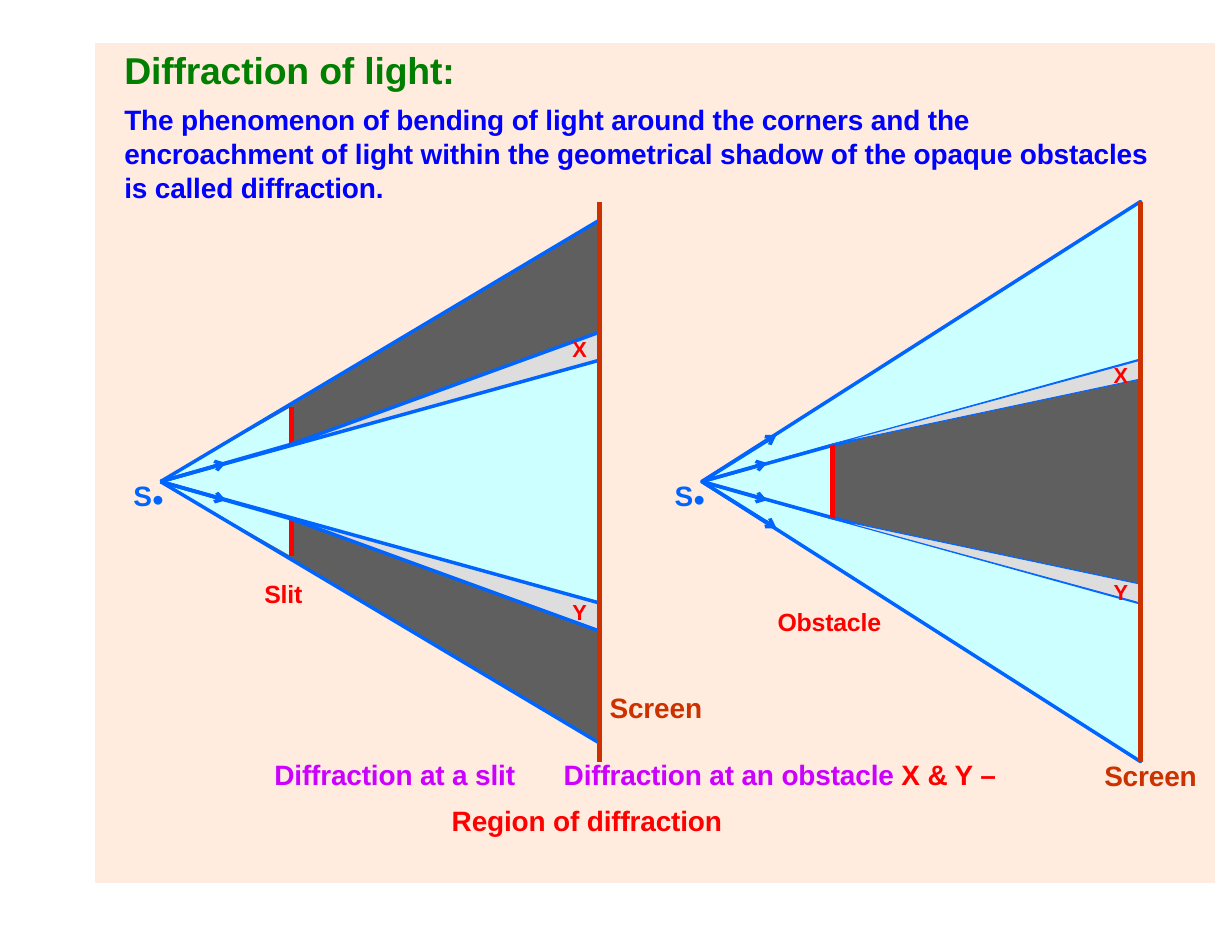
from dataclasses import dataclass
from typing import NamedTuple, Optional

from lxml import etree
from pptx import Presentation
from pptx import util as u
from pptx.dml.color import RGBColor
from pptx.enum import shapes, text
from pptx.oxml.ns import qn

UNIT = u.Inches(1) // 12


@dataclass(frozen=True)
class Theme:
    font: str = "Arial"
    card: str = "FFECDF"
    shadow: str = "5F5F5F"
    lit: str = "CCFFFF"
    fringe: str = "DDDDDD"
    ray: str = "0065FF"
    barrier: str = "FF0000"
    screen: str = "CC3200"
    title: str = "007F00"
    body: str = "0000FF"
    caption: str = "CC00FF"
    title_size: int = 24
    text_size: int = 18
    label_size: int = 16
    mark_size: int = 14
    dot_size: int = 36
    ray_width: float = 2.25
    wall_width: float = 3


class Point(NamedTuple):
    col: float
    row: float


class Run(NamedTuple):
    words: str
    color: str
    size: int
    bold: bool = True
    baseline: int = 0
    spacing: int = -10


class Label(NamedTuple):
    at: Point
    cols: float
    rows: float
    runs: list
    hang: Optional[dict] = None
    tab: float = 0
    line_spacing: float = 1.0


THEME = Theme()
SCREEN = 47
BARRIER = 14
SLIT_SOURCE = Point(17.2, 51.6)
OBSTACLE_SOURCE = Point(75.2, 51.6)


def emu(units: float) -> int:
    return round(units * UNIT)


def shift(origin: Point, col: float, row: float) -> Point:
    return Point(origin.col + col, origin.row + row)


def draw_outline(slide, origin: Point, corners: list, fill: str = "",
                 line: str = "", width: float = 0, close: bool = True) -> None:
    places = [shift(origin, *corner) for corner in corners]
    spots = [(emu(place.col), emu(place.row)) for place in places]
    builder = slide.shapes.build_freeform(*spots[0], scale=1.0)
    builder.add_line_segments(spots[1:], close=close)
    region = builder.convert_to_shape()
    region.shadow.inherit = False
    for part, color in ((region.fill, fill), (region.line.fill, line)):
        if color:
            part.solid()
            part.fore_color.rgb = RGBColor.from_string(color)
        else:
            part.background()
    if line:
        region.line.width = u.Pt(width)


def draw_line(slide, origin: Point, start: tuple, end: tuple, color: str,
              width: float, arrow: bool = False) -> None:
    begin, finish = shift(origin, *start), shift(origin, *end)
    ray = slide.shapes.add_connector(
        shapes.MSO_CONNECTOR.STRAIGHT, emu(begin.col), emu(begin.row),
        emu(finish.col), emu(finish.row))
    ray.line.color.rgb = RGBColor.from_string(color)
    ray.line.width = u.Pt(width)
    if arrow:
        etree.SubElement(ray.line._get_or_add_ln(), qn("a:tailEnd"),
                         type="arrow", w="med", len="med")
    etree.SubElement(ray._element.spPr, qn("a:effectLst"))


def draw_label(slide, label: Label) -> None:
    box = slide.shapes.add_textbox(
        emu(label.at.col), emu(label.at.row), emu(label.cols), emu(label.rows))
    frame_format = {"word_wrap": True, "margin_left": 0, "margin_right": 0,
                    "margin_top": u.Inches(0.01), "margin_bottom": 0,
                    "auto_size": text.MSO_AUTO_SIZE.SHAPE_TO_FIT_TEXT}
    for name, value in frame_format.items():
        setattr(box.text_frame, name, value)
    paragraph = box.text_frame.paragraphs[0]
    paragraph.space_before = u.Pt(1)
    paragraph.line_spacing = label.line_spacing
    properties = paragraph._p.get_or_add_pPr()
    for name, units in (label.hang or {"marL": 0.12}).items():
        properties.set(name, str(emu(units)))
    if label.tab:
        stops = etree.SubElement(properties, qn("a:tabLst"))
        etree.SubElement(stops, qn("a:tab"), pos=str(emu(label.tab)), algn="l")
    for part in label.runs:
        run = paragraph.add_run()
        run.text = part.words
        run_format = {"name": THEME.font, "size": u.Pt(part.size), "bold": part.bold}
        for name, value in run_format.items():
            setattr(run.font, name, value)
        run.font.color.rgb = RGBColor.from_string(part.color)
        run._r.get_or_add_rPr().set("spc", str(part.spacing))
        if part.baseline:
            run._r.get_or_add_rPr().set("baseline", str(part.baseline))


def draw_source(slide, source: Point) -> None:
    draw_label(slide, Label(shift(source, -3.4, -3.5), 4.4, 5.2, [
        Run("S", THEME.ray, THEME.text_size, spacing=20),
        Run("•", THEME.ray, THEME.dot_size, False, -10000, 30)], {"marL": 0.48}))


def draw_arrows(slide, source: Point, tips: list) -> None:
    for col, row in tips:
        for side in (-1, 1):
            draw_line(slide, source, (0, 0), (col, side * row), THEME.ray,
                      THEME.ray_width, arrow=True)


def draw_slit(slide, source: Point) -> None:
    t = THEME
    for side in (-1, 1):
        draw_outline(slide, source, [(0, 0), (SCREEN, 13 * side), (SCREEN, 28 * side)], t.shadow)
        draw_outline(slide, source, [(0, 0), (BARRIER, 4 * side), (BARRIER, 8 * side)], t.lit)
    draw_source(slide, source)
    draw_outline(slide, source, [(0, 0), (SCREEN, -13), (SCREEN, 13)], t.lit)
    for side in (-1, 1):
        edge = (BARRIER, 4 * side)
        draw_line(slide, source, edge, (BARRIER, 8 * side), t.barrier, t.wall_width)
        draw_outline(slide, source, [edge, (SCREEN, 13 * side), (SCREEN, 16 * side)], t.fringe)
        draw_outline(slide, source, [(0, 0), edge, (SCREEN, 16 * side)],
                     line=t.ray, width=t.ray_width, close=False)
        for reach in (28, 13):
            draw_line(slide, source, (0, 0), (SCREEN, reach * side), t.ray, t.ray_width)
    draw_line(slide, source, (SCREEN, -30), (SCREEN, 30), t.screen, t.wall_width)
    draw_arrows(slide, source, [(7, 2)])


def draw_obstacle(slide, source: Point) -> None:
    t = THEME
    draw_outline(slide, source, [(BARRIER, -4), (SCREEN, -13), (SCREEN, 13), (BARRIER, 4)], t.shadow)
    draw_outline(slide, source, [(0, 0), (BARRIER, -4), (BARRIER, 4)], t.lit, t.ray, 0.75)
    for side in (-1, 1):
        draw_outline(slide, source, [(0, 0), (SCREEN, 13 * side), (SCREEN, 30 * side)],
                     t.lit, t.ray, t.ray_width)
    draw_source(slide, source)
    draw_line(slide, source, (BARRIER, -4), (BARRIER, 4), t.barrier, t.wall_width)
    for side in (-1, 1):
        edge, inner = (BARRIER, 4 * side), (SCREEN, 11 * side)
        draw_outline(slide, source, [(0, 0), edge, inner], line=t.ray, width=1, close=False)
        draw_outline(slide, source, [edge, inner, (SCREEN, 13 * side)], t.fringe, t.ray, 0.5)
    draw_line(slide, source, (SCREEN, -30), (SCREEN, 30), t.screen, t.wall_width)
    draw_arrows(slide, source, [(8, 5), (7, 2)])


def build_labels() -> list:
    t = THEME
    definition = ("The phenomenon of bending of light around the corners and the "
                  "encroachment of light within the geometrical shadow of the "
                  "opaque obstacles is called diffraction.")
    labels = [
        Label(Point(13.2, 4.9), 40, 5.2, [Run("Diffraction of light:", t.title, t.title_size)]),
        Label(Point(13.2, 10.9), 111.4, 11.2, [Run(definition, t.body, t.text_size)]),
        Label(Point(29.2, 79.6), 87.2, 10.3, [
            Run("Diffraction at a slit\tDiffraction at an obstacle ", t.caption, t.text_size),
            Run("X & Y – Region of diffraction", t.barrier, t.text_size)],
            {"marL": 19.2, "indent": -19}, 51.1, 1.39)]
    tags = [
        (SLIT_SOURCE, 44, -15.7, 2, "X", t.barrier, t.mark_size),
        (SLIT_SOURCE, 44, 12.4, 2, "Y", t.barrier, t.mark_size),
        (OBSTACLE_SOURCE, 44, -13, 2, "X", t.barrier, t.mark_size),
        (OBSTACLE_SOURCE, 44, 10.3, 2, "Y", t.barrier, t.mark_size),
        (SLIT_SOURCE, 11, 10.3, 5, "Slit", t.barrier, t.label_size),
        (OBSTACLE_SOURCE, 8, 13.3, 12, "Obstacle", t.barrier, t.label_size),
        (SLIT_SOURCE, 48, 22.3, 11, "Screen", t.screen, t.text_size),
        (OBSTACLE_SOURCE, 43, 29.5, 11, "Screen", t.screen, t.text_size)]
    return labels + [Label(shift(source, col, row), cols, size / 4.5, [Run(words, color, size)])
                     for source, col, row, cols, words, color, size in tags]


def main() -> None:
    deck = Presentation()
    deck.slide_width, deck.slide_height = u.Inches(11), u.Inches(8.5)
    slide = deck.slides.add_slide(deck.slide_layouts[6])
    draw_outline(slide, Point(10.2, 4.6), [(0, 0), (120, 0), (120, 90), (0, 90)], THEME.card)
    draw_slit(slide, SLIT_SOURCE)
    draw_obstacle(slide, OBSTACLE_SOURCE)
    for label in build_labels():
        draw_label(slide, label)
    deck.save("out.pptx")


if __name__ == "__main__":
    main()
